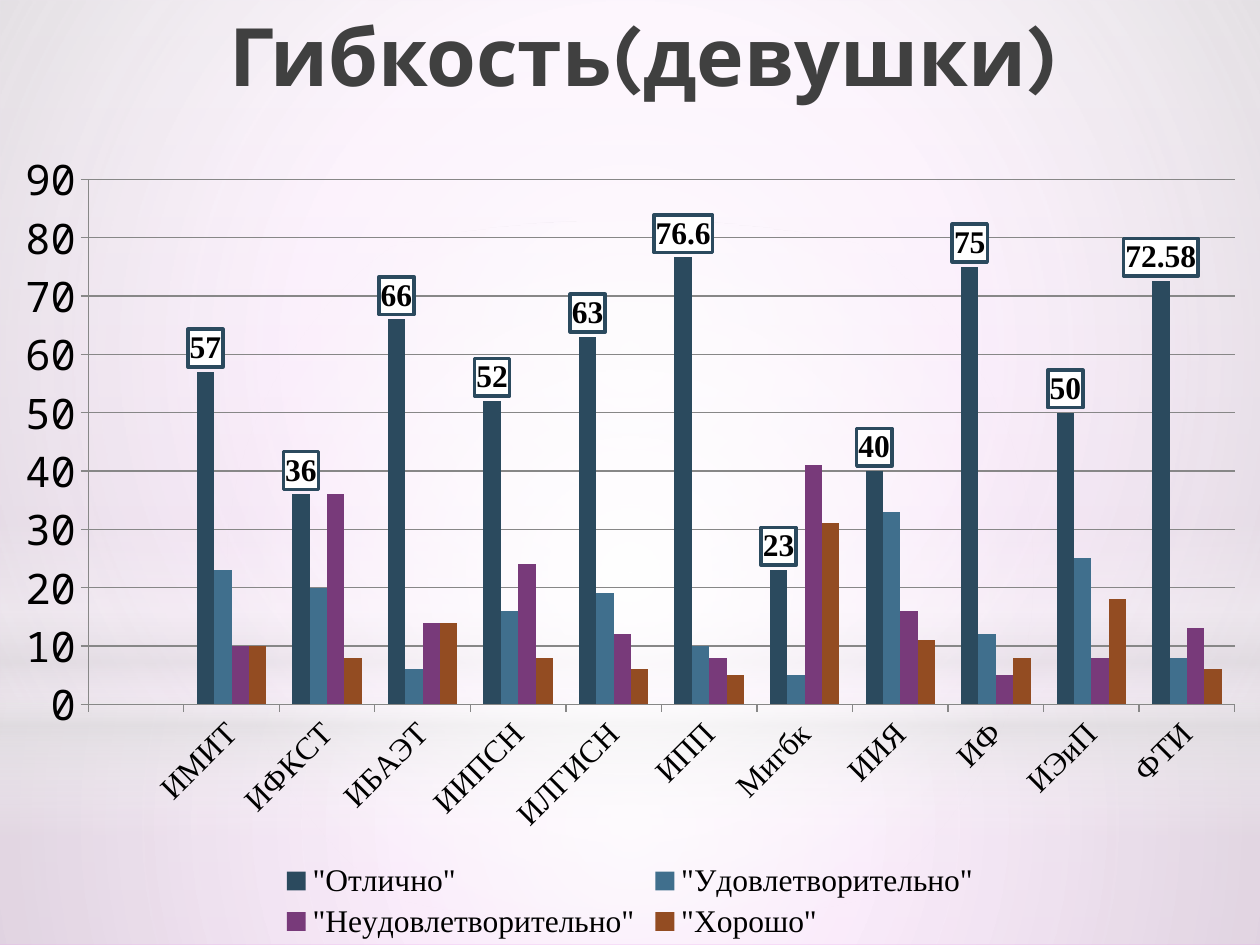
"""Build a slide with a clustered column chart of flexibility results for female students."""
from lxml.etree import SubElement
from pptx import Presentation
from pptx.chart.data import CategoryChartData
from pptx.dml.color import RGBColor
from pptx.enum.chart import XL_CHART_TYPE, XL_LABEL_POSITION, XL_LEGEND_POSITION, XL_TICK_MARK
from pptx.enum.shapes import MSO_SHAPE
from pptx.enum.text import MSO_ANCHOR, PP_ALIGN
from pptx.oxml import parse_xml
from pptx.oxml.ns import nsdecls, qn
from pptx.util import Pt


def color(value):
    """Turn a hex string into a colour."""
    return RGBColor.from_string(value)


def set_gradient(element, stops, angle=None):
    """Fill the element's gradient with stops, linear at an angle or radial from the centre."""
    gradient = next(element.iter(qn("a:gradFill")))
    for child in list(gradient):
        gradient.remove(child)
    stop_list = SubElement(gradient, qn("a:gsLst"))
    for position, value, opacity in stops:
        stop = SubElement(stop_list, qn("a:gs"), pos=str(position * 1000))
        stop_color = SubElement(stop, qn("a:srgbClr"), val=value)
        if opacity < 100:
            SubElement(stop_color, qn("a:alpha"), val=str(opacity * 1000))
    if angle is None:
        radial = SubElement(gradient, qn("a:path"), path="circle")
        SubElement(radial, qn("a:fillToRect"), l="50000", t="50000", r="50000", b="50000")
    else:
        SubElement(gradient, qn("a:lin"), ang=str(angle * 60000), scaled="0")


presentation = Presentation()
presentation.slide_width = Pt(720)
presentation.slide_height = Pt(540)
slide = presentation.slides.add_slide(presentation.slide_layouts[5])

slide.background.fill.gradient()
set_gradient(slide._element, [(0, "EAACED", 100), (35, "EFC5F1", 100), (100, "FAE8FB", 100)], 270)

backdrops = [
    (MSO_SHAPE.RECTANGLE, 402, 138, None,
     [(0, "FFFFFF", 91), (37, "FFFFFF", 76), (100, "DEDEDE", 79)]),
    (MSO_SHAPE.RECTANGLE, 0, 402, None,
     [(0, "FFFFFF", 89), (48, "FFFFFF", 62), (100, "DEDEDE", 79)]),
    (MSO_SHAPE.RECTANGLE, 297, 180, 90,
     [(0, "FFFFFF", 0), (29, "FFFFFF", 30), (45, "DEDEDE", 40),
      (55, "FFFFFF", 26), (65, "DEDEDE", 60), (100, "FFFFFF", 0)]),
    (MSO_SHAPE.OVAL, 126, 402, None, [(0, "FFFFFF", 100), (56, "FFFFFF", 0)]),
]
for kind, top, height, angle, stops in backdrops:
    shape = slide.shapes.add_shape(kind, 0, Pt(top), Pt(720), Pt(height))
    shape.shadow.inherit = False
    shape.line.fill.background()
    shape.fill.gradient()
    set_gradient(shape._element, stops, angle)

title = slide.shapes.title
slide.shapes._spTree.append(title._element)
title.left, title.top, title.width, title.height = Pt(99), Pt(0), Pt(513), Pt(90)
title.text_frame.text = "Гибкость(девушки)"
title.text_frame.word_wrap = True
title.text_frame.vertical_anchor = MSO_ANCHOR.TOP
paragraph = title.text_frame.paragraphs[0]
paragraph.alignment = PP_ALIGN.RIGHT
font = paragraph.runs[0].font
font.name, font.size, font.bold = "Karla", Pt(46), True
font.color.rgb = color("404040")

series_data = [
    ('"Отлично"', "2B4A5E", [None, 57, 36, 66, 52, 63, 76.6, 23, 40, 75, 50, 72.58]),
    ('"Удовлетворительно"', "406F8D", [None, 23, 20, 6, 16, 19, 10, 5, 33, 12, 25, 8]),
    ('"Неудовлетворительно"', "783A7A", [None, 10, 36, 14, 24, 12, 8, 41, 16, 5, 8, 13]),
    ('"Хорошо"', "934C22", [None, 10, 8, 14, 8, 6, 5, 31, 11, 8, 18, 6]),
]
chart_data = CategoryChartData()
chart_data.categories = ["", "ИМИТ", "ИФКСТ", "ИБАЭТ", "ИИПСН", "ИЛГИСН",
                         "ИПП", "Мигбк", "ИИЯ", "ИФ", "ИЭиП", "ФТИ"]
for name, fill, values in series_data:
    chart_data.add_series(name, values)
chart_height = 463
chart = slide.shapes.add_chart(XL_CHART_TYPE.COLUMN_CLUSTERED, 0, Pt(77), Pt(720),
                               Pt(chart_height), chart_data).chart
chart.has_title = False
chart.font.name, chart.font.size = "Karla", Pt(10)
chart.font.color.rgb = color("000000")

plot = chart.plots[0]
plot.gap_width, plot.overlap, plot.vary_by_categories = 150, 0, False
for series, (name, fill, values) in zip(plot.series, series_data):
    series.format.fill.solid()
    series.format.fill.fore_color.rgb = color(fill)
    series.invert_if_negative = False

labels = plot.series[0].data_labels
labels.show_value = True
labels.position = XL_LABEL_POSITION.OUTSIDE_END
labels.font.bold = True
labels._element.find(qn("c:txPr")).addprevious(parse_xml(
    f'<c:spPr {nsdecls("c", "a")}><a:solidFill><a:srgbClr val="FFFFFF"/></a:solidFill>'
    '<a:ln w="25400"><a:solidFill><a:srgbClr val="2B4A5E"/></a:solidFill></a:ln></c:spPr>'))

category_axis, value_axis = chart.category_axis, chart.value_axis
chart.has_legend = True
chart.legend.position = XL_LEGEND_POSITION.BOTTOM
chart.legend.include_in_layout = False
for font, name, size in [(labels.font, "Times New Roman", 18),
                         (chart.legend.font, "Times New Roman", 18),
                         (category_axis.tick_labels.font, "Times New Roman", 18),
                         (value_axis.tick_labels.font, "Noto Sans Mono", 24)]:
    font.name, font.size = name, Pt(size)
    font.color.rgb = color("000000")

value_axis.minimum_scale, value_axis.maximum_scale, value_axis.major_unit = 0, 90, 10
value_axis.has_major_gridlines = True
for axis in (category_axis, value_axis):
    axis.major_tick_mark = XL_TICK_MARK.OUTSIDE
    axis.format.line.color.rgb = color("878787")
value_axis.major_gridlines.format.line.color.rgb = color("878787")
category_axis._element.find(qn("c:txPr")).find(qn("a:bodyPr")).set("rot", "-2700000")

plot_top, plot_height = 25.5 / chart_height, 300 / chart_height
plot_area = chart._chartSpace.chart.plotArea
for old_layout in plot_area.findall(qn("c:layout")):
    plot_area.remove(old_layout)
plot_area.insert(0, parse_xml(
    f'<c:layout {nsdecls("c")}><c:manualLayout><c:layoutTarget val="inner"/>'
    f'<c:xMode val="edge"/><c:yMode val="edge"/><c:x val="0.07"/><c:y val="{plot_top}"/>'
    f'<c:w val="0.91"/><c:h val="{plot_height}"/></c:manualLayout></c:layout>'))

presentation.save("out.pptx")
